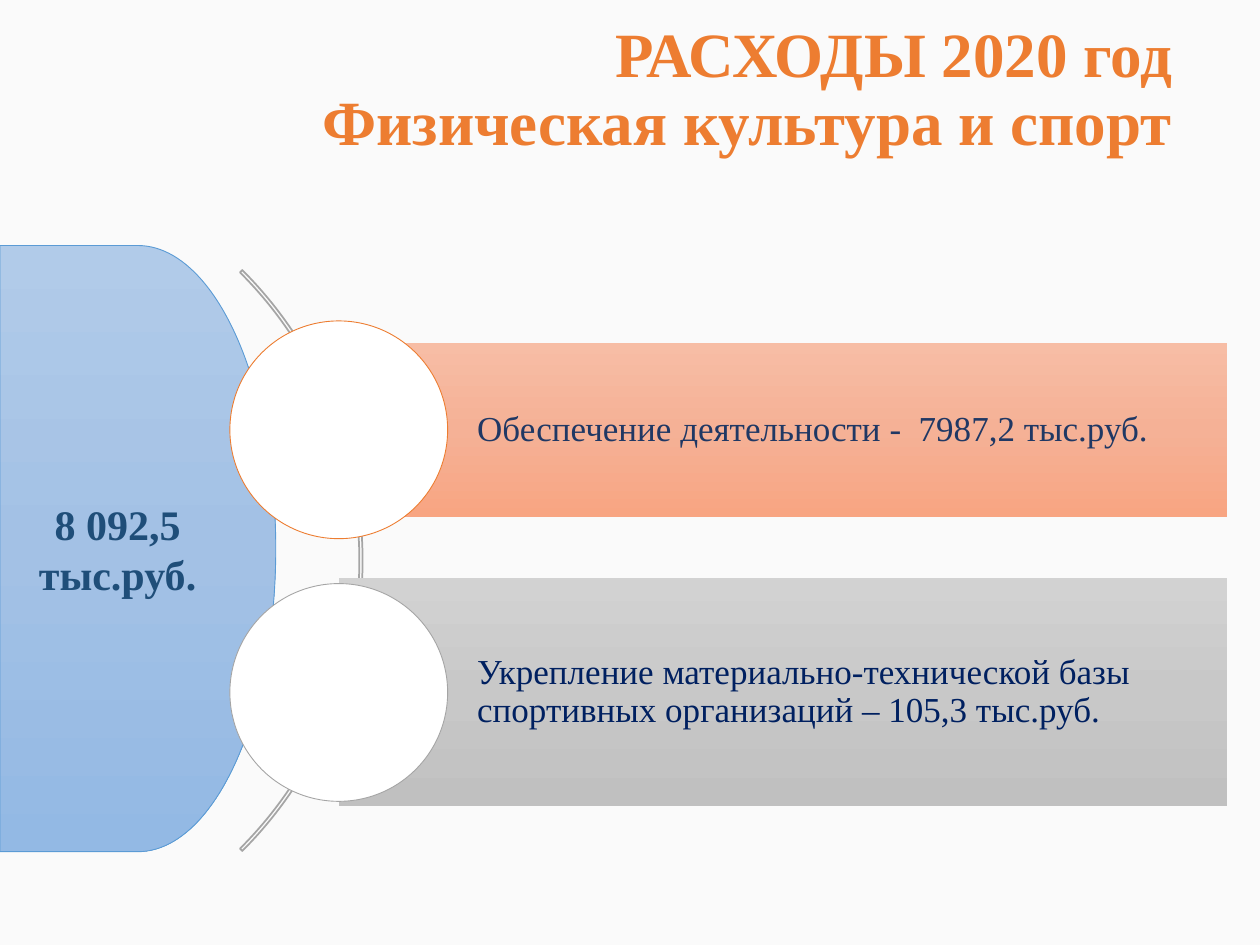
from copy import deepcopy

from pptx import Presentation
from pptx.dml.color import RGBColor
from pptx.enum.shapes import MSO_SHAPE
from pptx.enum.text import MSO_ANCHOR, MSO_AUTO_SIZE, PP_ALIGN
from pptx.oxml.ns import qn
from pptx.util import Cm, Pt

FONT = "Times New Roman"
ARC, DELAY = MSO_SHAPE.BLOCK_ARC, MSO_SHAPE.FLOWCHART_DELAY
BAR, CIRCLE = MSO_SHAPE.RECTANGLE, MSO_SHAPE.OVAL
LEFT, CENTER, RIGHT = PP_ALIGN.LEFT, PP_ALIGN.CENTER, PP_ALIGN.RIGHT
MIDDLE = MSO_ANCHOR.MIDDLE
NO_AUTOFIT = MSO_AUTO_SIZE.NONE
TITLE_ONLY = 5
CIRCLE_SIZE = 4.39

# Text, text colour, top and height (cm), gradient, circle outline
EXPENSES = [
    ("Обеспечение деятельности -  7987,2 тыс.руб.", "203864", 6.91, 3.51,
     ("F7BDA5", "F5B196", "F8A582"), "ED7D31"),
    ("Укрепление материально-технической базы спортивных организаций – 105,3 тыс.руб.",
     "002060", 11.66, 4.6, ("D2D2D2", "C8C8C8", "C0C0C0"), "A5A5A5"),
]


def color(hex_string):
    return RGBColor.from_string(hex_string)


def add_gradient(shape, colors):
    """Fill from top to bottom with three evenly spaced colours."""
    fill = shape.fill
    fill.gradient()
    fill.gradient_angle = 270
    stop_list = shape._element.spPr.find(qn("a:gradFill")).find(qn("a:gsLst"))
    stop_list.insert(1, deepcopy(stop_list[0]))
    for index, (stop, hex_string) in enumerate(zip(fill.gradient_stops, colors)):
        stop.position = index / 2
        stop.color.rgb = color(hex_string)


def add_shape(page, kind, left, top, width, height, line=None, line_width=0.5):
    shape = page.shapes.add_shape(kind, Cm(left), Cm(top), Cm(width), Cm(height))
    shape.shadow.inherit = False
    if line:
        shape.line.color.rgb = color(line)
        shape.line.width = Pt(line_width)
    else:
        shape.line.fill.background()
    return shape


def write(shape, text, size, hex_string, align, bold=False, spacing=1.0):
    frame = shape.text_frame
    frame.text = text
    frame.word_wrap = True
    frame.auto_size = NO_AUTOFIT
    frame.vertical_anchor = MIDDLE
    para = frame.paragraphs[0]
    para.alignment = align
    para.line_spacing = spacing
    for span in para.runs:
        span.font.name = FONT
        span.font.size = Pt(size)
        span.font.bold = bold
        span.font.color.rgb = color(hex_string)


def place_title(page, left, top, width, height):
    title = page.shapes.title
    title.left, title.top = Cm(left), Cm(top)
    title.width, title.height = Cm(width), Cm(height)
    write(title, "РАСХОДЫ 2020 год\vФизическая культура и спорт", 36, "ED7D31",
          RIGHT, bold=True, spacing=0.9)


def add_total(page, left, top, width, height):
    total = add_shape(page, DELAY, left, top, width, height, "5B9BD5")
    add_gradient(total, ("B1CBE9", "A3C1E5", "93B9E4"))
    write(total, "8 092,5 тыс.руб.", 24, "1F4E79", CENTER, bold=True)


def add_arc(page, left, top, size):
    arc = add_shape(page, ARC, left, top, size, size, "A5A5A5", 1)
    arc.fill.background()
    for index, value in enumerate((189, 27, 0.004)):
        arc.adjustments[index] = value


def add_expense(page, left, top, width, height, text, text_color, gradient, outline):
    """Add a bar with a circle centred on its left edge."""
    bar = add_shape(page, BAR, left, top, width, height)
    add_gradient(bar, gradient)
    write(bar, text, 20, text_color, LEFT, spacing=0.9)
    frame = bar.text_frame
    frame.margin_left = Cm(2.79)
    frame.margin_top = frame.margin_right = frame.margin_bottom = Cm(0.15)

    circle = add_shape(page, CIRCLE, left - CIRCLE_SIZE / 2,
                       top + (height - CIRCLE_SIZE) / 2,
                       CIRCLE_SIZE, CIRCLE_SIZE, outline)
    circle.fill.solid()
    circle.fill.fore_color.rgb = color("FFFFFF")


def main():
    deck = Presentation()
    deck.slide_width, deck.slide_height = Cm(25.4), Cm(19.05)
    page = deck.slides.add_slide(deck.slide_layouts[TITLE_ONLY])
    page.background.fill.solid()
    page.background.fill.fore_color.rgb = color("FAFAFA")

    place_title(page, 1.98, 0, 21.9, 3.68)
    add_total(page, 0, 4.95, 5.56, 12.22)
    add_arc(page, -9.25, 3.02, 16.56)
    for text, text_color, top, height, gradient, outline in EXPENSES:
        add_expense(page, 6.83, top, 17.91, height, text, text_color, gradient, outline)
    deck.save("out.pptx")


if __name__ == "__main__":
    main()
